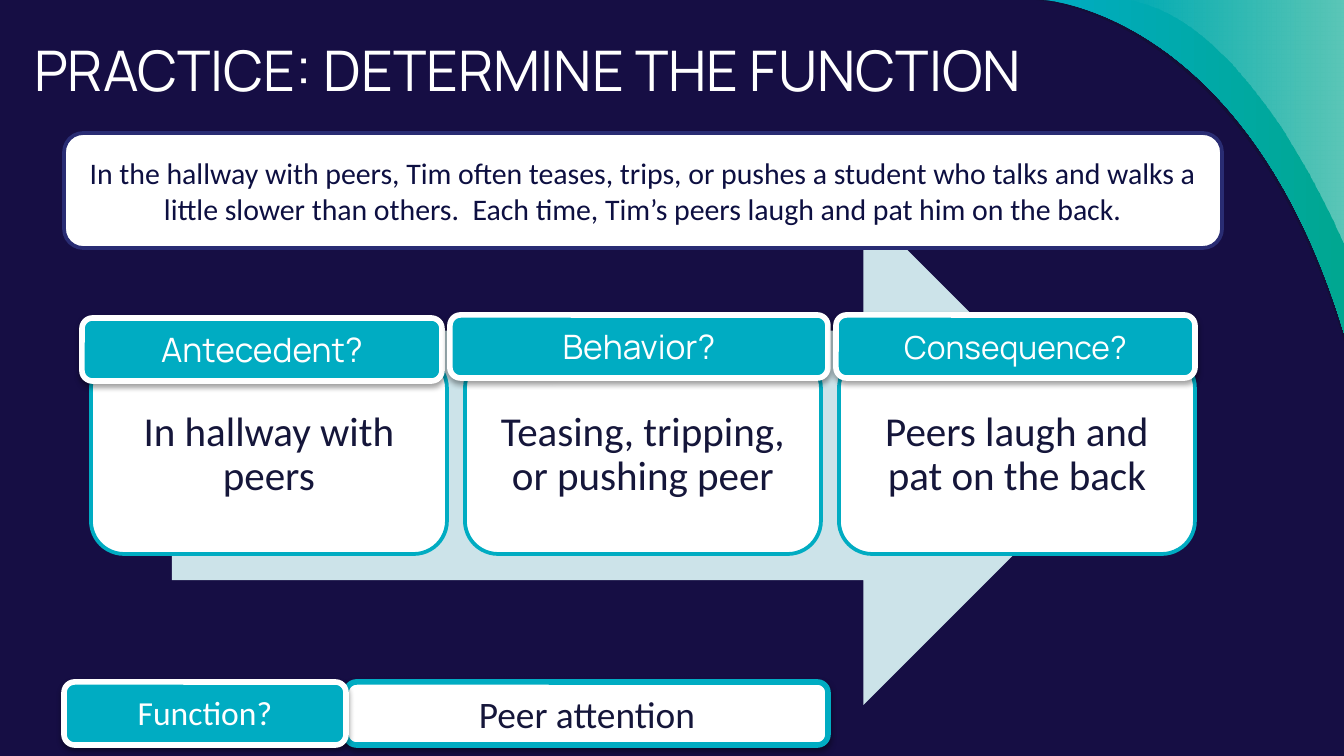
from lxml import etree
from pptx import Presentation
from pptx.dml.color import RGBColor
from pptx.enum.shapes import MSO_SHAPE
from pptx.enum.text import MSO_ANCHOR, PP_ALIGN
from pptx.oxml.ns import qn
from pptx.util import Pt

ROUNDED = MSO_SHAPE.ROUNDED_RECTANGLE
ARROW = MSO_SHAPE.RIGHT_ARROW
MIDDLE, TOP = MSO_ANCHOR.MIDDLE, MSO_ANCHOR.TOP
CENTER, LEFT = PP_ALIGN.CENTER, PP_ALIGN.LEFT

WIDTH, HEIGHT = 1344, 756
SCALE = 9144000 / WIDTH
COLORS = {
    "night": "160E44", "shade": "12102F", "teal": "00ACC2", "green": "00A791",
    "white": "FFFFFF", "mist": "CCE3E9", "ink": "15163A", "navy": "0D0F41",
    "indigo": "292C73", "black": "000000",
}


def emu(px):
    """Turn px into EMU."""
    return round(px * SCALE)


def rgb(name):
    """Look up a named colour."""
    return RGBColor.from_string(COLORS[name])


def set_alpha(color, percent):
    """Give a colour element an opacity."""
    etree.SubElement(color, qn("a:alpha")).set("val", str(percent * 1000))


def add_soft_shadow(shape):
    """Cast a small dark shadow straight down."""
    effects = shape._element.spPr.find(qn("a:effectLst"))
    shadow = etree.SubElement(effects, qn("a:outerShdw"), blurRad=str(Pt(3.1)),
                              dist=str(Pt(1.6)), dir="5400000", rotWithShape="0")
    color = etree.SubElement(shadow, qn("a:srgbClr"), val=COLORS["black"])
    set_alpha(color, 38)


def add_panel(shapes, box, fill, line=None, line_width=2, kind=ROUNDED):
    """Add a flat filled shape, outlined when a line colour is given."""
    panel = shapes.add_shape(kind, *map(emu, box))
    panel.shadow.inherit = False
    panel.fill.solid()
    panel.fill.fore_color.rgb = rgb(fill)
    if line:
        panel.line.color.rgb = rgb(line)
        panel.line.width = Pt(line_width)
    else:
        panel.line.fill.background()
    return panel


def write(shape, text, size, color, font="Calibri", align=CENTER, anchor=MIDDLE):
    """Write one wrapped paragraph into a shape."""
    frame = shape.text_frame
    frame.word_wrap = True
    frame.vertical_anchor = anchor
    paragraph = frame.paragraphs[0]
    paragraph.text = text
    paragraph.alignment = align
    paragraph.font.size = Pt(size)
    paragraph.font.name = font
    paragraph.font.color.rgb = rgb(color)
    return paragraph


def add_text(shapes, box, inset, *args):
    """Add a text box with equal insets and return its paragraph."""
    text_box = shapes.add_textbox(*map(emu, box))
    frame = text_box.text_frame
    frame.margin_left = frame.margin_right = emu(inset)
    frame.margin_top = frame.margin_bottom = emu(inset)
    return write(text_box, *args)


def add_corner_curve(shapes, box, curve):
    """Add the area between a cubic curve and the top right corner of the box."""
    left, top, width, _ = box
    outline = [(emu(left + x), emu(top + y)) for x, y in [*curve, (width, 0)]]
    builder = shapes.build_freeform(*outline[0])
    builder.add_line_segments(outline[1:], close=True)
    area = builder.convert_to_shape()
    segments = list(area._element.spPr.iter(qn("a:lnTo")))[:3]
    bend = etree.Element(qn("a:cubicBezTo"))
    segments[0].addprevious(bend)
    for segment in segments:
        bend.append(segment[0])
        segment.getparent().remove(segment)
    area.shadow.inherit = False
    area.line.fill.background()
    return area


def fill_gradient(shape, names):
    """Fill a shape from left to right and return its stop colours."""
    shape.fill.gradient()
    shape.fill.gradient_angle = 0
    for stop, name in zip(shape.fill.gradient_stops, names):
        stop.color.rgb = rgb(name)
    return list(shape._element.spPr.iter(qn("a:srgbClr")))


def add_swoosh(slide, box):
    """Layer a shade, a teal band and a sheen in the corner."""
    shapes = slide.shapes.add_group_shape().shapes
    shade = add_corner_curve(shapes, box, [(0, 0), (0, 0), (209, 11), (308, 341)])
    shade.fill.solid()
    shade.fill.fore_color.rgb = rgb("shade")
    set_alpha(next(shade._element.spPr.iter(qn("a:srgbClr"))), 54)

    band = add_corner_curve(shapes, box, [(8, 0), (8, 0), (211, 11), (308, 333)])
    fill_gradient(band, ("teal", "green"))

    sheen = add_corner_curve(shapes, box, [(89, 0), (215, 15), (308, 247), (308, 247)])
    for color, percent in zip(fill_gradient(sheen, ("white", "white")), (0, 36)):
        set_alpha(color, percent)


def add_answers(slide, box, answers):
    """Add the wide arrow with one answer card per step in front."""
    shapes = slide.shapes.add_group_shape().shapes
    left, top, _, height = box
    add_panel(shapes, (left + 81, top, 941, height), "mist", kind=ARROW)
    card_width, card_height, gap, pad = 356, 199, 18, 10
    for index, answer in enumerate(answers):
        x, y = left + index * (card_width + gap), top + 149
        add_panel(shapes, (x, y, card_width, card_height), "white", "teal")
        text_area = (x + pad, y + pad + 1, card_width - 2 * pad, card_height - 2 * pad)
        add_text(shapes, text_area, 12, answer, 22, "ink").line_spacing = 0.9


def add_label(slide, box, text, size=18, font="Manrope", anchor=MIDDLE):
    """Add a teal label with a white outline."""
    label = add_panel(slide.shapes, box, "teal", "white", 3)
    add_soft_shadow(label)
    write(label, text, size, "white", font, anchor=anchor)


def add_step_labels(slide, box):
    """Add the labels that overlap the tops of the cards."""
    left, top, _, height = box
    add_label(slide, (left, top + 3, 360, height), "Antecedent?")
    add_label(slide, (left + 368, top, 378, height), "Behavior?")
    add_label(slide, (left + 754, top, 359, height), "Consequence?", 17)


def add_function_row(slide, box):
    """Add the function label and its answer side by side."""
    left, top, width, height = box
    label_width = 282
    answer = add_panel(slide.shapes,
                       (left + label_width, top, width - label_width, height),
                       "white", "teal", 3)
    add_soft_shadow(answer)
    write(answer, "Peer attention", 20, "ink")
    add_label(slide, (left, top, label_width, height), "Function?",
              font="Calibri", anchor=TOP)


def add_title(slide, box, text):
    """Add the slide title."""
    add_text(slide.shapes, box, 13, text, 30, "white", "Manrope", LEFT, TOP)


def add_scenario(slide, box, text):
    """Add the outlined scenario box."""
    write(add_panel(slide.shapes, box, "white", "indigo"), text, 16, "navy")


def main():
    """Build and save the slide."""
    deck = Presentation()
    deck.slide_width, deck.slide_height = emu(WIDTH), emu(HEIGHT)
    slide = deck.slides.add_slide(deck.slide_layouts[6])
    slide.background.fill.solid()
    slide.background.fill.fore_color.rgb = rgb("night")

    add_swoosh(slide, (1036, 0, 308, 341))
    add_answers(slide, (91, 206, 1104, 499), (
        "In hallway with peers",
        "Teasing, tripping, or pushing peer",
        "Peers laugh and pat on the back",
    ))
    add_step_labels(slide, (82, 315, 1113, 63))
    add_function_row(slide, (64, 682, 764, 63))
    add_title(slide, (21, 23, 1034, 93), "PRACTICE: DETERMINE THE FUNCTION")
    add_scenario(slide, (64, 133, 1158, 115), (
        "In the hallway with peers, Tim often teases, trips, or pushes a student "
        "who talks and walks a little slower than others.  Each time, Tim’s peers "
        "laugh and pat him on the back."))
    deck.save("out.pptx")


if __name__ == "__main__":
    main()
